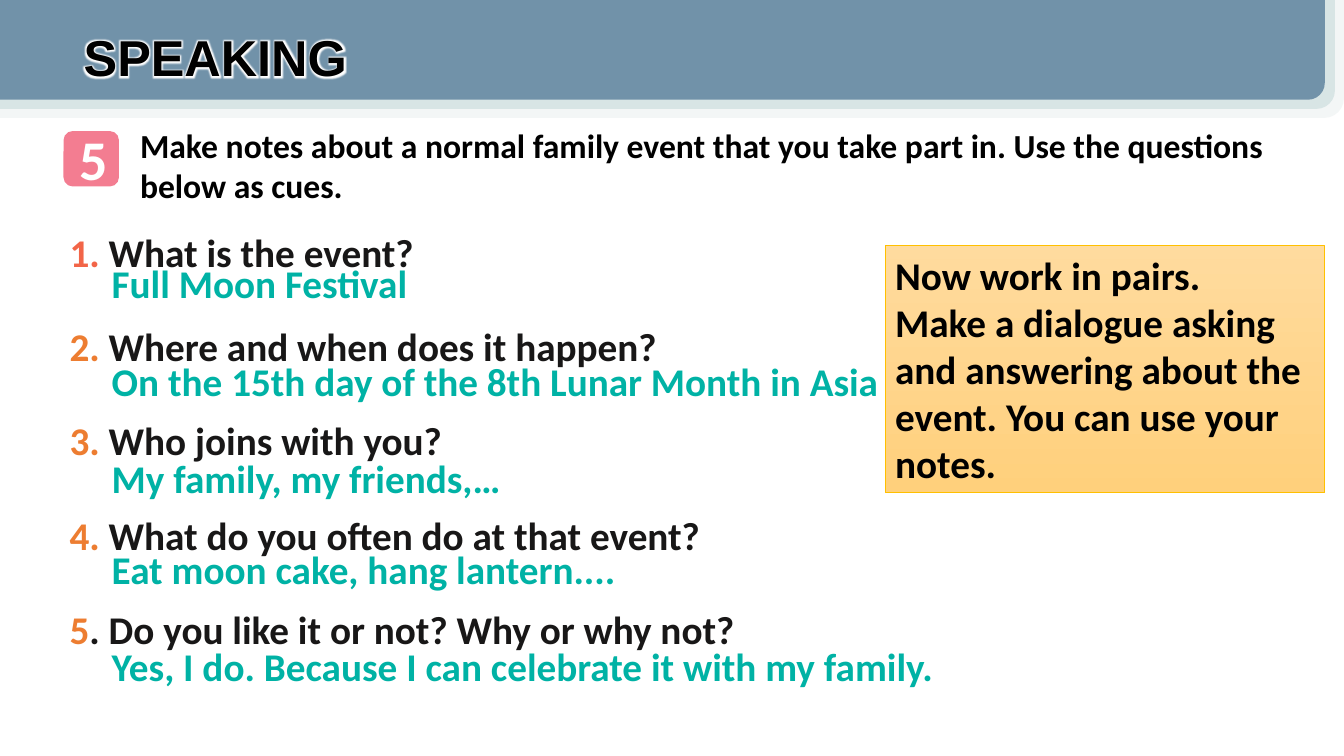
"""Build the speaking lesson slide with its questions, sample answers and pair task."""
from lxml.etree import SubElement
from pptx import Presentation
from pptx.dml.color import RGBColor
from pptx.enum.shapes import MSO_SHAPE as Shape
from pptx.enum.text import MSO_ANCHOR as Anchor, MSO_AUTO_SIZE as AutoSize, PP_ALIGN as Align
from pptx.oxml.ns import qn
from pptx.util import Inches, Pt

BLACK, WHITE, INK = "000000", "FFFFFF", "181717"
TEAL, CORAL, ORANGE, PINK, AMBER = "00B2A5", "F26548", "ED7D31", "F37D91", "FFC000"

QUESTIONS = [
    ("1. ", CORAL, "What is the event?"),
    ("2. ", ORANGE, "Where and when does it happen?"),
    ("3. ", ORANGE, "Who joins with you?"),
    ("4. ", ORANGE, "What do you often do at that event?"),
    ("5", ORANGE, ". Do you like it or not? Why or why not?"),
]
ANSWERS = [
    (2.52, 3.17, "Full Moon Festival"),
    (3.5, 7.99, "On the 15th day of the 8th Lunar Month in Asia"),
    (4.46, 4.14, "My family, my friends,…"),
    (5.36, 5.26, "Eat moon cake, hang lantern...."),
    (6.32, 8.45, "Yes, I do. Because I can celebrate it with my family."),
]
HEADER_BANDS = [(13.33, 1.18, "F3F6F6"), (13.24, 1.09, "D8E5E5"), (13.14, 1, "7192A9")]


def rgb(code):
    return RGBColor.from_string(code)


class LessonSlide:
    """Hold the text style and the current slide, and add its elements."""

    def __init__(self, deck, font="Calibri", size=28):
        self.slide = deck.slides.add_slide(deck.slide_layouts[1])
        self.shapes = self.slide.shapes
        self.font, self.size = font, size

    def place(self, shape, left, top, width, height):
        shape.left, shape.top = Inches(left), Inches(top)
        shape.width, shape.height = Inches(width), Inches(height)

    def style(self, paragraph, color=None, size=None, font=None, align=Align.LEFT):
        paragraph.alignment = align
        paragraph.font.name = font or self.font
        paragraph.font.size = Pt(size or self.size)
        paragraph.font.bold = True
        if color:
            paragraph.font.color.rgb = rgb(color)

    def fill_text(self, shape, text, color, wrap=True, anchor=Anchor.TOP, **look):
        frame = shape.text_frame
        frame.text = text
        frame.word_wrap, frame.vertical_anchor = wrap, anchor
        frame.auto_size = AutoSize.SHAPE_TO_FIT_TEXT
        self.style(frame.paragraphs[0], color, **look)

    def text(self, box, text, color, **look):
        self.fill_text(self.shapes.add_textbox(*map(Inches, box)), text, color, **look)

    def block(self, kind, box, color):
        block = self.shapes.add_shape(kind, *map(Inches, box))
        block.shadow.inherit = False
        block.fill.solid()
        block.fill.fore_color.rgb = rgb(color)
        block.line.fill.background()
        return block

    def band(self, width, height, color):
        band = self.block(Shape.ROUND_1_RECTANGLE, (0, -0.01, width, height), color)
        band._element.spPr.find(qn("a:xfrm")).set("flipV", "1")

    def task(self, box, text, top_color, bottom_color):
        task = self.block(Shape.RECTANGLE, box, top_color)
        task.fill.gradient()
        task.fill.gradient_angle = 270
        for stop, color in zip(task.fill.gradient_stops, (top_color, bottom_color)):
            stop.color.rgb = rgb(color)
        task.line.color.rgb = rgb(AMBER)
        task.line.width = Pt(0.5)
        self.fill_text(task, text, BLACK, anchor=Anchor.MIDDLE)

    def questions(self, box, questions):
        body = self.slide.placeholders[1]
        self.place(body, *box)
        frame = body.text_frame
        frame.word_wrap, frame.auto_size = False, AutoSize.SHAPE_TO_FIT_TEXT
        for index, (number, number_color, wording) in enumerate(questions):
            question = frame.add_paragraph() if index else frame.paragraphs[0]
            question.line_spacing = 2.0
            question.space_before = Pt(0)
            properties = question._p.get_or_add_pPr()
            properties.set("marL", "0")
            properties.set("indent", "0")
            SubElement(properties, qn("a:buNone"))
            self.style(question)
            for part, color in ((number, number_color), (wording, INK)):
                run = question.add_run()
                run.text = part
                run.font.color.rgb = rgb(color)

    def title(self, box, text):
        title = self.shapes.title
        self.place(title, *box)
        self.fill_text(title, text, BLACK, size=36, font="Arial")
        run = title.text_frame.paragraphs[0].runs[0]
        effects = SubElement(run._r.get_or_add_rPr(), qn("a:effectLst"))
        glow = SubElement(effects, qn("a:glow"), rad=str(Pt(4)))
        SubElement(glow, qn("a:srgbClr"), val=WHITE)
        title._element.getparent().append(title._element)


def main():
    deck = Presentation()
    deck.slide_width, deck.slide_height = Inches(13.33), Inches(7.5)
    lesson = LessonSlide(deck)
    lesson.questions((0.59, 1.75, 6.87, 4.81), QUESTIONS)
    lesson.text((1.29, 1.19, 11.38, 0.91),
                "Make notes about a normal family event that you take part in. "
                "Use the questions below as cues.", BLACK, size=24)
    lesson.block(Shape.ROUNDED_RECTANGLE, (0.63, 1.3, 0.55, 0.55), PINK)
    lesson.text((0.69, 1.19, 0.43, 0.77), "5", WHITE, size=40, align=Align.CENTER)
    lesson.task((8.78, 2.43, 4.36, 2.46),
                "Now work in pairs.\vMake a dialogue asking and answering about the event. "
                "You can use your notes.", "FFDB9E", "FFD07C")
    for top, width, answer in ANSWERS:
        lesson.text((1.01, top, width, 0.57), answer, TEAL, wrap=False)
    for width, height, color in HEADER_BANDS:
        lesson.band(width, height, color)
    lesson.title((0.73, 0.21, 3.35, 0.71), "SPEAKING")
    deck.save("out.pptx")


if __name__ == "__main__":
    main()
